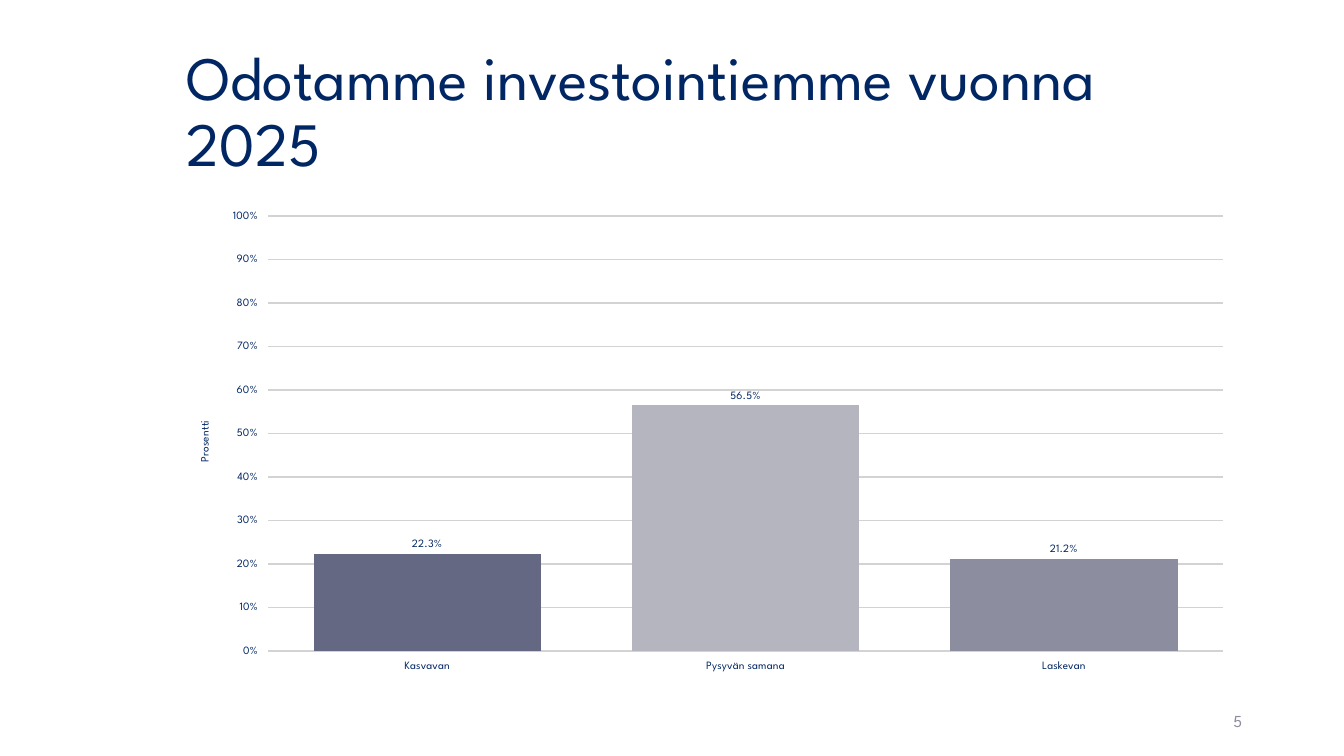
from dataclasses import dataclass, field

import pptx
import pptx.chart.data
import pptx.dml.color
import pptx.enum.chart
import pptx.enum.text
import pptx.oxml
import pptx.oxml.ns
import pptx.util

W, H = pptx.util.Inches(13.33), pptx.util.Inches(7.5)
FONT = "League Spartan"
COLORS = {"navy": "002663", "slate": "646883", "silver": "B4B5BF",
          "grey": "8C8E9F", "grid": "D3D3D3"}


@dataclass
class Box:
    """Left, top, width and height as percentages of the slide."""
    x: float
    y: float
    w: float
    h: float

    def emu(self) -> tuple[int, ...]:
        return (round(W * self.x / 100), round(H * self.y / 100),
                round(W * self.w / 100), round(H * self.h / 100))


@dataclass
class Label:
    text: str
    box: Box
    size: float
    color: str
    para: dict = field(default_factory=dict)


@dataclass
class Bar:
    name: str
    value: float
    color: str


LABELS = [
    Label("Odotamme investointiemme vuonna 2025", Box(13.13, 5.33, 79.44, 19.33),
          44, "navy", {"line_spacing": 0.9}),
    Label("5", Box(70.67, 92.67, 22.5, 5.33), 12, "grey",
          {"alignment": pptx.enum.text.PP_ALIGN.RIGHT,
           "space_after": pptx.util.Pt(6)}),
]
CHART_BOX = Box(13.13, 26.67, 79.44, 63.47)
BARS = [Bar("Kasvavan", 0.223, "slate"),
        Bar("Pysyvän samana", 0.565, "silver"),
        Bar("Laskevan", 0.212, "grey")]


def rgb(name: str) -> pptx.dml.color.RGBColor:
    return pptx.dml.color.RGBColor.from_string(COLORS[name])


def apply(obj, values: dict) -> None:
    for name, value in values.items():
        setattr(obj, name, value)


def set_font(font, size: float, color: str = "navy") -> None:
    apply(font, {"name": FONT, "size": pptx.util.Pt(size), "bold": False})
    font.color.rgb = rgb(color)


def add_label(s, label: Label) -> None:
    tf = s.shapes.add_textbox(*label.box.emu()).text_frame
    apply(tf, {"word_wrap": True,
               "vertical_anchor": pptx.enum.text.MSO_ANCHOR.MIDDLE})
    p = tf.paragraphs[0]
    apply(p, label.para)
    r = p.add_run()
    r.text = label.text
    set_font(r.font, label.size, label.color)


def set_layout(parent, index: int, places: dict, inner: bool = False) -> None:
    """Place a chart part by percentages of the chart's size."""
    for old in parent.findall(pptx.oxml.ns.qn("c:layout")):
        parent.remove(old)
    target = '<c:layoutTarget val="inner"/>' if inner else ""
    modes = "".join(f'<c:{k}Mode val="edge"/>' for k in ("x", "y"))
    sizes = "".join(f'<c:{k} val="{v / 100:.4f}"/>' for k, v in places.items())
    parent.insert(index, pptx.oxml.parse_xml(
        f'<c:layout {pptx.oxml.ns.nsdecls("c")}><c:manualLayout>'
        f'{target}{modes}{sizes}</c:manualLayout></c:layout>'))


def add_bar_chart(s, box: Box, bars: list[Bar]) -> None:
    data = pptx.chart.data.CategoryChartData()
    data.categories = [bar.name for bar in bars]
    data.add_series("Series 1", [bar.value for bar in bars])
    kind = pptx.enum.chart.XL_CHART_TYPE.COLUMN_CLUSTERED
    chart = s.shapes.add_chart(kind, *box.emu(), data).chart
    apply(chart, {"has_legend": False, "has_title": False})
    set_font(chart.font, 18)

    # Axes and gridlines
    for axis in (chart.category_axis, chart.value_axis):
        axis.major_tick_mark = pptx.enum.chart.XL_TICK_MARK.OUTSIDE
        axis.format.line.fill.background()
        set_font(axis.tick_labels.font, 8)
    axis = chart.value_axis
    apply(axis, {"minimum_scale": 0, "maximum_scale": 1, "major_unit": 0.1,
                 "has_major_gridlines": True})
    apply(axis.tick_labels, {"number_format": "0%",
                             "number_format_is_linked": False})
    line = axis.major_gridlines.format.line
    line.color.rgb = rgb("grid")
    line.width = pptx.util.Pt(1)

    # Axis title
    r = axis.axis_title.text_frame.paragraphs[0].add_run()
    r.text = "Prosentti"
    set_font(r.font, 8)
    title = axis.axis_title._element
    set_layout(title, 1, {"x": 1.9, "y": 45.2})
    plot_area = chart._chartSpace.chart.plotArea
    set_layout(plot_area, 0, {"x": 8.58, "y": 3, "w": 89.46, "h": 90.66}, True)

    # Bars and their values
    plot = chart.plots[0]
    apply(plot, {"gap_width": 40, "overlap": -2, "vary_by_categories": False,
                 "has_data_labels": True})
    apply(plot.data_labels, {
        "show_value": True, "number_format": "0.0%",
        "number_format_is_linked": False,
        "position": pptx.enum.chart.XL_LABEL_POSITION.OUTSIDE_END})
    set_font(plot.data_labels.font, 8)
    for i, bar in enumerate(bars):
        fill = plot.series[0].points[i].format.fill
        fill.solid()
        fill.fore_color.rgb = rgb(bar.color)


def main() -> None:
    prs = pptx.Presentation()
    apply(prs, {"slide_width": W, "slide_height": H})
    s = prs.slides.add_slide(prs.slide_layouts[6])
    for label in LABELS:
        add_label(s, label)
    add_bar_chart(s, CHART_BOX, BARS)
    prs.save("out.pptx")


if __name__ == "__main__":
    main()
